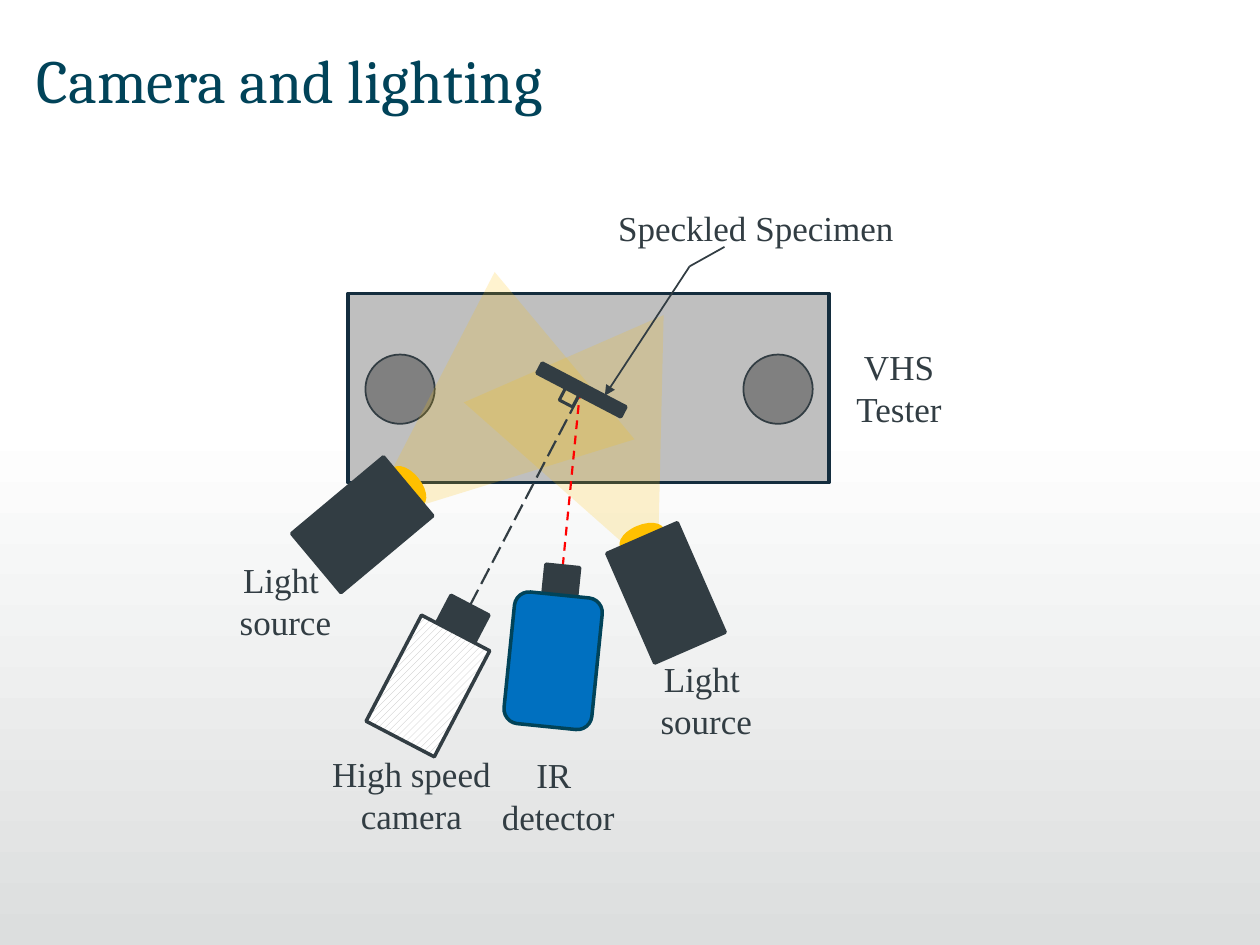
from dataclasses import dataclass
from math import cos, radians, sin
from typing import NamedTuple

from lxml.etree import SubElement
from pptx import Presentation
from pptx.dml.color import RGBColor
from pptx.enum.dml import MSO_LINE as Dash, MSO_PATTERN as Pattern
from pptx.enum.shapes import MSO_CONNECTOR as Connector, MSO_SHAPE as Shape
from pptx.enum.text import MSO_ANCHOR as Anchor, PP_ALIGN as Align
from pptx.oxml.ns import qn
from pptx.util import Pt


@dataclass(frozen=True)
class Theme:
    title: str = "014359"
    ink: str = "323D43"
    frame: str = "142D3E"
    bed: str = "BFBFBF"
    column: str = "808080"
    light: str = "FFC000"
    detector: str = "0070C0"
    infrared: str = "FF0000"
    white: str = "FFFFFF"
    haze: str = "DCDEDE"
    title_font: str = "Cambria"
    label_font: str = "Times New Roman"
    title_size: float = 35
    label_size: float = 20


THEME = Theme()


class Box(NamedTuple):
    left: float
    top: float
    width: float
    height: float

    def ahead(self, angle, distance):
        """Point at a distance from the centre, along the turned upward axis."""
        turn = radians(angle)
        return (self.left + self.width / 2 + distance * sin(turn),
                self.top + self.height / 2 - distance * cos(turn))


def around(point, width, height):
    return Box(point[0] - width / 2, point[1] - height / 2, width, height)


def rgb(color):
    return RGBColor.from_string(color)


def add_shape(page, kind, box, fill=None, line=None, weight=2, angle=0, alpha=None):
    shape = page.shapes.add_shape(kind, *map(Pt, box))
    shape.shadow.inherit = False
    shape.rotation = angle
    if fill:
        shape.fill.solid()
        shape.fill.fore_color.rgb = rgb(fill)
    else:
        shape.fill.background()
    if alpha:
        color = shape.element.spPr.find(qn("a:solidFill"))[0]
        SubElement(color, qn("a:alpha")).set("val", str(alpha * 1000))
    if line:
        shape.line.color.rgb = rgb(line)
        shape.line.width = Pt(weight)
    else:
        shape.line.fill.background()
    return shape


def add_line(page, start, end, color=THEME.ink, weight=1, dash=None, arrow=False):
    line = page.shapes.add_connector(Connector.STRAIGHT, *map(Pt, (*start, *end)))
    line.line.color.rgb = rgb(color)
    line.line.width = Pt(weight)
    if dash:
        line.line.dash_style = dash
    if arrow:
        SubElement(line.line._get_or_add_ln(), qn("a:tailEnd")).set("type", "triangle")
    SubElement(line.element.spPr, qn("a:effectLst"))


def add_text(page, box, text, font, size, color, align):
    frame = page.shapes.add_textbox(*map(Pt, box)).text_frame
    frame.text = text
    for para in frame.paragraphs:
        para.alignment = align
        for span in para.runs:
            span.font.name = font
            span.font.size = Pt(size)
            span.font.color.rgb = rgb(color)
    return frame


def add_label(page, box, text):
    frame = add_text(page, box, text, THEME.label_font, THEME.label_size,
                     THEME.ink, Align.CENTER)
    frame.word_wrap = False


def add_backdrop(page, box):
    fill = add_shape(page, Shape.RECTANGLE, box).fill
    fill.gradient()
    fill.gradient_angle = 270
    for stop, color in zip(fill.gradient_stops, (THEME.white, THEME.haze)):
        stop.color.rgb = rgb(color)


def add_title(page, box, text):
    frame = add_text(page, box, text, THEME.title_font, THEME.title_size,
                     THEME.title, Align.LEFT)
    frame.word_wrap = True
    frame.margin_left = 0
    frame.vertical_anchor = Anchor.MIDDLE


def add_test_machine(page, box):
    add_shape(page, Shape.RECTANGLE, box, THEME.bed, THEME.frame)
    for x in (10.1, 226.1):
        column = Box(box.left + x, box.top + 34.8, 39.6, 39.6)
        add_shape(page, Shape.OVAL, column, THEME.column, THEME.ink, 1)
    add_label(page, Box(box.left + box.width + 4.4, box.top + 25.9, 71.3, 55.4),
              "VHS\nTester")


def add_light_source(page, body, angle, beam_offset, beam_length, label):
    beam = around(body.ahead(angle, beam_offset), 124.6, beam_length)
    add_shape(page, Shape.FLOWCHART_MERGE, beam, THEME.light, angle=angle, alpha=19)
    bulb = around(body.ahead(angle, 34.2), 13, 25.2)
    add_shape(page, Shape.OVAL, bulb, THEME.light, THEME.light, angle=angle - 89)
    add_shape(page, Shape.RECTANGLE, body, THEME.ink, THEME.ink, angle=angle)
    add_label(page, label, "Light \nsource")


def add_camera(page, body, angle, kind, outline, lens_offset, lens_size, target,
               sight_color, sight_dash, label, text):
    """Body with a lens ahead of it and a line of sight to the target."""
    lens_tip = body.ahead(angle, lens_offset + lens_size[1] / 2)
    add_line(page, lens_tip, target, sight_color, 1.25, sight_dash)
    lens = around(body.ahead(angle, lens_offset), *lens_size)
    add_shape(page, Shape.RECTANGLE, lens, THEME.ink, THEME.ink, angle=angle)
    add_label(page, label, text)
    return add_shape(page, kind, body, THEME.detector, outline, angle=angle)


def add_specimen(page, box, angle):
    corner = Box(box.left + 15.8, box.top + 2.9, 8.6, 8.6)
    add_shape(page, Shape.RECTANGLE, corner, line=THEME.ink, weight=1.75, angle=angle)
    add_shape(page, Shape.RECTANGLE, box, THEME.ink, THEME.ink, angle=angle)
    # Callout
    tip, bend, tail = [(box.left + x, box.top + y)
                       for x, y in ((40.3, 6.5), (88.8, -67.4), (108.7, -78.5))]
    add_line(page, bend, tip, arrow=True)
    add_line(page, bend, tail)
    add_label(page, Box(box.left + 40.3, box.top - 105.1, 172.8, 31.7),
              "Speckled Specimen")


def main():
    deck = Presentation()
    deck.slide_width, deck.slide_height = Pt(720), Pt(540)
    page = deck.slides.add_slide(deck.slide_layouts[6])

    # Background and title
    add_backdrop(page, Box(0, 240, 720, 300))
    add_title(page, Box(20.9, 19.4, 668.9, 51.1), "Camera and lighting")

    # Test machine and its lighting
    add_test_machine(page, Box(198.7, 167.8, 275, 108))
    add_light_source(page, Box(185, 265.7, 44, 68.4), 50.1, 76.2, 149,
                     Box(129.6, 315.4, 67, 55.4))
    add_light_source(page, Box(358.6, 304.6, 44, 68.4), 336.4, 79, 134,
                     Box(370.1, 372.2, 67, 55.4))

    # Cameras aimed at the specimen
    target = (331.2, 225.8)
    camera = add_camera(page, Box(222.5, 357.8, 44, 68.4), 27.6, Shape.RECTANGLE,
                        THEME.ink, 39.8, (24.5, 24.5), target, THEME.ink,
                        Dash.LONG_DASH, Box(182.2, 426.2, 105.8, 55.4),
                        "High speed\ncamera")
    camera.fill.patterned()
    camera.fill.pattern = Pattern.WIDE_UPWARD_DIAGONAL
    camera.fill.fore_color.rgb = rgb(THEME.bed)
    camera.fill.back_color.rgb = rgb(THEME.white)
    add_camera(page, Box(290.9, 339.8, 50.4, 75.6), 5.8, Shape.ROUNDED_RECTANGLE,
               THEME.title, 46.6, (19.4, 15.8), target, THEME.infrared, Dash.DASH,
               Box(279.4, 427, 79.2, 55.4), "IR \ndetector")
    add_specimen(page, Box(305.3, 219.6, 54, 6.5), 27.6)

    deck.save("out.pptx")


if __name__ == "__main__":
    main()
